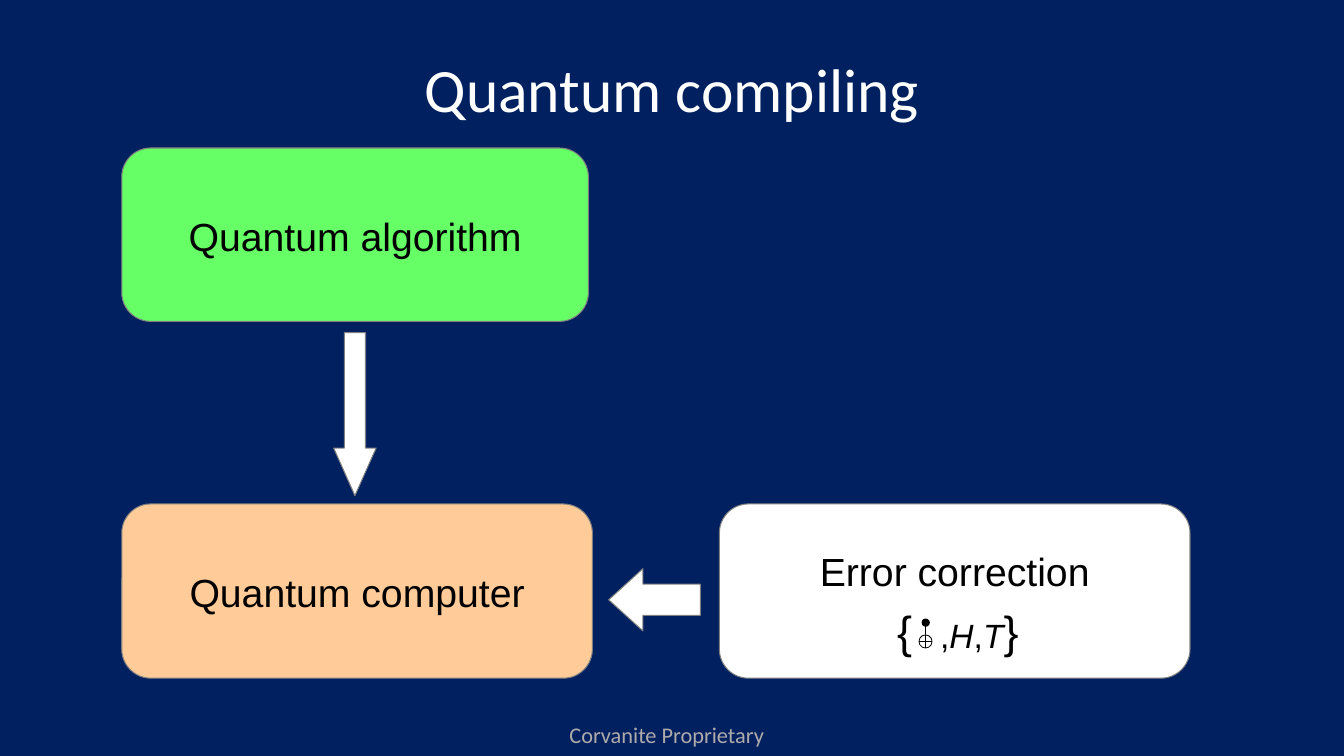
from pptx import Presentation
from pptx.dml.color import RGBColor
from pptx.enum.shapes import MSO_CONNECTOR, MSO_SHAPE
from pptx.enum.text import MSO_ANCHOR, PP_ALIGN
from pptx.oxml.ns import qn
from pptx.util import Cm, Pt
from lxml import etree

ROUND, OVAL = MSO_SHAPE.ROUNDED_RECTANGLE, MSO_SHAPE.OVAL
DOWN, LEFT = MSO_SHAPE.DOWN_ARROW, MSO_SHAPE.LEFT_ARROW
LINE = MSO_CONNECTOR.STRAIGHT
MIDDLE, TOP = MSO_ANCHOR.MIDDLE, MSO_ANCHOR.TOP
CENTER, START = PP_ALIGN.CENTER, PP_ALIGN.LEFT

THEME = {
    "navy": RGBColor(0x00, 0x20, 0x60), "white": RGBColor(0xFF, 0xFF, 0xFF),
    "black": RGBColor(0, 0, 0), "gray": RGBColor(0x80, 0x80, 0x80),
    "silver": RGBColor(0xAF, 0xAB, 0xAB), "green": RGBColor(0x66, 0xFF, 0x66),
    "peach": RGBColor(0xFF, 0xCC, 0x99),
    "head": Pt(44), "brace": Pt(32), "label": Pt(28), "gate": Pt(24), "foot": Pt(16),
    "sans": "Arial", "body": "Calibri",
}


def draw(home, kind, box, fill, edge, width=0.75):
    shape = home.add_shape(kind, *map(Cm, box))
    shape.shadow.inherit = False
    if fill:
        shape.fill.solid()
        shape.fill.fore_color.rgb = THEME[fill]
    else:
        shape.fill.background()
    shape.line.color.rgb = THEME[edge]
    shape.line.width = Pt(width)
    return shape


def write(shape, runs, face, color, pad, anchor=MIDDLE, align=CENTER, wrap=False):
    frame = shape.text_frame
    sides = ("margin_left", "margin_top", "margin_right", "margin_bottom")
    form = dict(zip(sides, map(Cm, pad)), vertical_anchor=anchor, word_wrap=wrap)
    for name, value in form.items():
        setattr(frame, name, value)
    para = frame.paragraphs[0]
    para.alignment = align
    for text, size, slant in runs:
        run = para.add_run()
        run.text = text
        run.font.color.rgb = THEME[color]
        form = {"name": THEME[face], "size": THEME[size], "italic": slant}
        for name, value in form.items():
            setattr(run.font, name, value)
    return para


# Slide
deck = Presentation()
deck.slide_width, deck.slide_height = Cm(33.87), Cm(19.05)
slide = deck.slides.add_slide(deck.slide_layouts[6])
slide.background.fill.solid()
slide.background.fill.fore_color.rgb = THEME["navy"]
shapes = slide.shapes

# Title
title = shapes.add_textbox(Cm(5.51), Cm(0.76), Cm(22.86), Cm(3.18))
para = write(title, [("Quantum compiling", "head", False)], "body", "white",
             (0.25, 0.08, 0.25, 0.13), wrap=True)
para.line_spacing = 0.9

# Arrows
arrows = [
    (DOWN, (8.41, 8.38, 1.07, 4.11), 1.12),
    (LEFT, (15.34, 14.33, 2.31, 1.57), 0.55),
]
for kind, box, tip in arrows:
    arrow = draw(shapes, kind, box, "white", "gray")
    arrow.adjustments[0], arrow.adjustments[1] = 0.5, tip

# Boxes; the last one keeps room for the gate set below its label
boxes = [
    ("Quantum computer", (3.07, 12.7, 11.86, 4.39), "peach", 0.1),
    ("Quantum algorithm", (3.07, 3.73, 11.76, 4.37), "green", 0.1),
    ("Error correction", (18.13, 12.7, 11.86, 4.39), "white", 1.17),
]
for text, box, fill, base in boxes:
    block = draw(shapes, ROUND, box, fill, "gray")
    write(block, [(text, "label", False)], "sans", "black", (0.23, 0.15, 0.23, base))

# Gate set with the controlled-NOT symbol
group = shapes.add_group_shape().shapes
draw(group, OVAL, (23.24, 15.6, 0.18, 0.18), "black", "black")
draw(group, OVAL, (23.16, 16, 0.33, 0.33), None, "black", 0.57)
for ends in [(23.33, 15.77, 23.33, 16.33), (23.16, 16.16, 23.49, 16.16)]:
    wire = group.add_connector(LINE, *map(Cm, ends))
    wire.line.color.rgb = THEME["black"]
    wire.line.width = Pt(0.75)
    etree.SubElement(wire._element.spPr, qn("a:effectLst"))
gates = group.add_textbox(Cm(22.38), Cm(15.06), Cm(4.4), Cm(1.45))
para = write(gates, [("{", "brace", False), (",", "gate", False), ("H", "gate", True),
                     (",", "gate", False), ("T", "gate", True), ("}", "brace", False)],
             "sans", "black", (0.23, 0.15, 0.23, 0.1), TOP, START)
# Letter spacing of 20 pt leaves room for the symbol
para.runs[0].font._element.set("spc", "2000")

# Footer
foot = shapes.add_textbox(Cm(14.1), Cm(18.03), Cm(5.49), Cm(0.94))
write(foot, [("Corvanite Proprietary", "foot", False)], "body", "silver",
      (0.25, 0.13, 0.25, 0.13), TOP, START)

deck.save("out.pptx")
